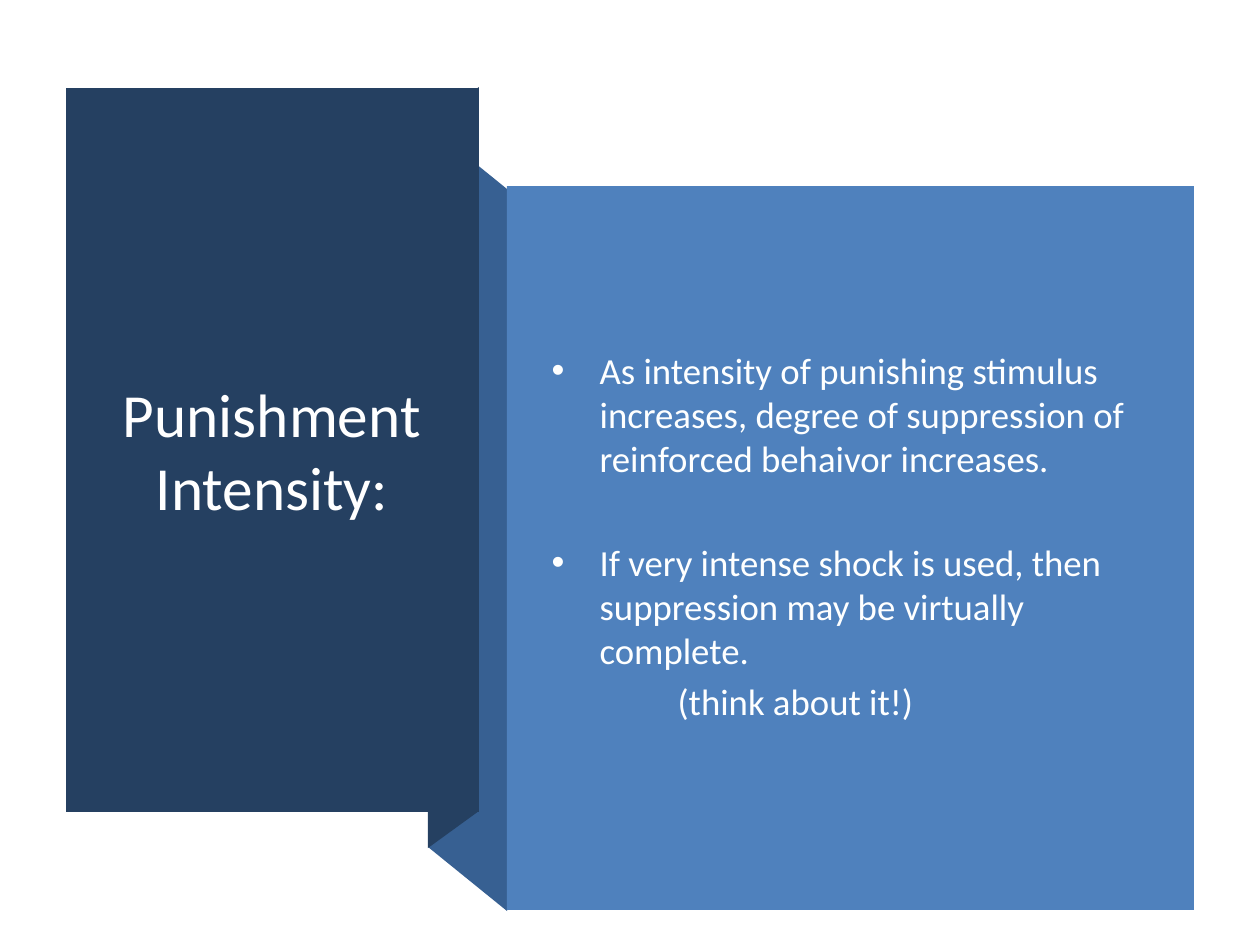
"""Build the punishment intensity slide with a folded title banner."""
import pptx
import pptx.dml.color
import pptx.enum.shapes
import pptx.enum.text
import pptx.oxml.ns
import pptx.util
from lxml import etree

RGB = pptx.dml.color.RGBColor
NAVY = RGB(0x25, 0x40, 0x61)
FOLD_BLUE = RGB(0x37, 0x60, 0x92)
PANEL_BLUE = RGB(0x4F, 0x81, 0xBD)
WHITE = RGB(0xFF, 0xFF, 0xFF)
OFF_WHITE = RGB(0xFE, 0xFF, 0xFF)
ALIGN = pptx.enum.text.PP_ALIGN
PX = 914400 / 126

TITLE = "Punishment Intensity:"
BODY = [
    ("As intensity of punishing stimulus increases, degree of suppression of "
     "reinforced behaivor increases.", dict(margin=48, indent=-48, before=4)),
    ("If very intense shock is used, then suppression may be virtually complete.",
     dict(margin=48, indent=-48, before=34)),
    ("(think about it!)", dict(margin=126, before=4, bullet=False)),
]
FOLDS = [
    ([(507, 911), (428, 847), (428, 125), (507, 189)], FOLD_BLUE),
    ([(479, 811), (428, 848), (428, 123), (479, 87)], NAVY),
    ([(66, 88), (479, 88), (479, 812), (66, 812)], NAVY),
]
PANEL_BOX = (507, 186, 687, 724)
TITLE_BOX = (97, 135, 350, 629)
BODY_BOX = (539, 237, 615, 597)


def emu(px):
    return round(px * PX)


def paint(sp, color):
    sp.shadow.inherit = False
    sp.fill.solid()
    sp.fill.fore_color.rgb = color
    sp.line.fill.background()


def write(p, text, size, color, align=ALIGN.LEFT, margin=0, indent=0, before=0, bullet=True):
    p.alignment = align
    p.space_before = pptx.util.Pt(before)
    pPr = p._p.get_or_add_pPr()
    pPr.set("marL", str(emu(margin)))
    pPr.set("indent", str(emu(indent)))
    if not bullet:
        etree.SubElement(pPr, pptx.oxml.ns.qn("a:buNone"))
    r = p.add_run()
    r.text = text
    r.font.name = "Calibri"
    r.font.size = pptx.util.Pt(size)
    r.font.color.rgb = color


def place(sp, box):
    sp.left, sp.top, sp.width, sp.height = map(emu, box)
    sp._element.getparent().append(sp._element)
    tf = sp.text_frame
    tf.word_wrap = True
    tf.auto_size = pptx.enum.text.MSO_AUTO_SIZE.NONE
    tf.vertical_anchor = pptx.enum.text.MSO_ANCHOR.MIDDLE
    return tf


def main():
    prs = pptx.Presentation()
    prs.slide_width, prs.slide_height = emu(1260), emu(945)
    s = prs.slides.add_slide(prs.slide_layouts[1])

    for points, color in FOLDS:
        fb = s.shapes.build_freeform(*points[0], scale=PX)
        fb.add_line_segments(points[1:], close=True)
        paint(fb.convert_to_shape(), color)

    tf = place(s.shapes.title, TITLE_BOX)
    write(tf.paragraphs[0], TITLE, 35, WHITE, align=ALIGN.CENTER)

    rect = pptx.enum.shapes.MSO_SHAPE.RECTANGLE
    paint(s.shapes.add_shape(rect, *map(emu, PANEL_BOX)), PANEL_BLUE)

    tf = place(s.placeholders[1], BODY_BOX)
    for i, (text, style) in enumerate(BODY):
        p = tf.add_paragraph() if i else tf.paragraphs[0]
        write(p, text, 21, OFF_WHITE, **style)

    prs.save("out.pptx")


if __name__ == "__main__":
    main()
